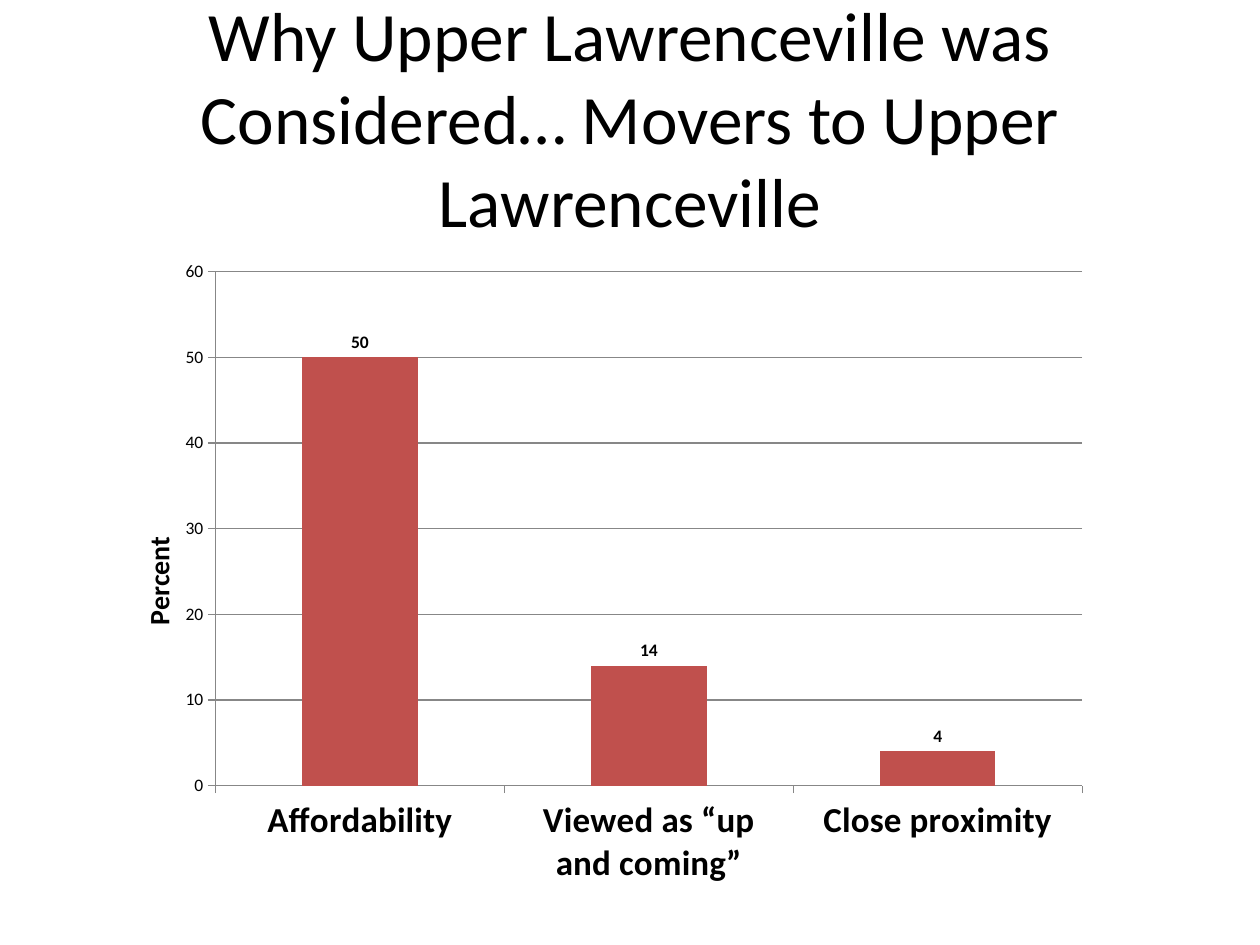
"""Build a slide with a column chart of reasons for considering Upper Lawrenceville."""
from lxml import etree
from pptx import Presentation
from pptx.chart.data import CategoryChartData
from pptx.dml.color import RGBColor
from pptx.enum.chart import XL_CHART_TYPE, XL_LABEL_POSITION, XL_TICK_MARK
from pptx.enum.text import MSO_ANCHOR, PP_ALIGN
from pptx.oxml.ns import qn
from pptx.util import Pt

COLUMN = XL_CHART_TYPE.COLUMN_CLUSTERED
OUTSIDE_END = XL_LABEL_POSITION.OUTSIDE_END
TICK_OUTSIDE = XL_TICK_MARK.OUTSIDE
MIDDLE = MSO_ANCHOR.MIDDLE
CENTER = PP_ALIGN.CENTER

BLACK = RGBColor(0x00, 0x00, 0x00)
GRAY = RGBColor(0x87, 0x87, 0x87)
RED = RGBColor(0xC0, 0x50, 0x4D)
FONT = "Calibri"

TITLE = "Why Upper Lawrenceville was Considered… Movers to Upper Lawrenceville"
REASONS = {"Affordability": 50, "Viewed as “up and coming”": 14, "Close proximity": 4}


def set_font(font, size, bold=False):
    font.name = FONT
    font.size = Pt(size)
    font.bold = bold
    font.color.rgb = BLACK


def set_layout(element, index, **settings):
    for existing in element.findall(qn("c:layout")):
        element.remove(existing)
    layout = etree.Element(qn("c:layout"))
    element.insert(index, layout)
    manual = etree.SubElement(layout, qn("c:manualLayout"))
    for name, value in settings.items():
        etree.SubElement(manual, qn(f"c:{name}")).set("val", str(value))


def add_title(slide):
    box = slide.shapes.add_textbox(Pt(36), Pt(21.6), Pt(648), Pt(90))
    frame = box.text_frame
    frame.word_wrap = True
    frame.vertical_anchor = MIDDLE
    paragraph = frame.paragraphs[0]
    paragraph.text = TITLE
    paragraph.alignment = CENTER
    set_font(paragraph.font, 39.6)


def style_axes(chart):
    for axis in (chart.category_axis, chart.value_axis):
        axis.major_tick_mark = TICK_OUTSIDE
        axis.format.line.color.rgb = GRAY
    set_font(chart.category_axis.tick_labels.font, 20, bold=True)

    value_axis = chart.value_axis
    value_axis.minimum_scale = 0
    value_axis.maximum_scale = 60
    value_axis.major_unit = 10
    value_axis.major_gridlines.format.line.color.rgb = GRAY
    set_font(value_axis.tick_labels.font, 10)

    title = value_axis.axis_title
    paragraph = title.text_frame.paragraphs[0]
    paragraph.text = "Percent"
    set_font(paragraph.font, 16, bold=True)
    set_layout(title._element, 1, xMode="edge", yMode="edge", x=0.04, y=0.43)


def style_columns(plot):
    plot.gap_width = 150
    plot.vary_by_categories = False
    series = plot.series[0]
    series.format.fill.solid()
    series.format.fill.fore_color.rgb = RED
    labels = series.data_labels
    labels.show_value = True
    labels.number_format = "#,##0"
    labels.number_format_is_linked = False
    labels.position = OUTSIDE_END
    set_font(labels.font, 10, bold=True)


def add_reasons_chart(slide):
    data = CategoryChartData()
    data.categories = list(REASONS)
    data.add_series("Series 1", list(REASONS.values()))
    frame = slide.shapes.add_chart(COLUMN, Pt(54), Pt(144), Pt(576), Pt(372), data)
    chart = frame.chart
    chart.has_legend = False
    chart.has_title = False
    set_font(chart.font, 10)
    style_axes(chart)
    style_columns(chart.plots[0])
    plot_area = chart._chartSpace.chart.plotArea
    set_layout(plot_area, 0, layoutTarget="inner", xMode="edge", yMode="edge",
               x=0.12, y=0.03, w=0.86, h=0.79)


def main():
    presentation = Presentation()
    presentation.slide_width = Pt(720)
    presentation.slide_height = Pt(540)
    slide = presentation.slides.add_slide(presentation.slide_layouts[6])
    add_title(slide)
    add_reasons_chart(slide)
    presentation.save("out.pptx")


if __name__ == "__main__":
    main()
